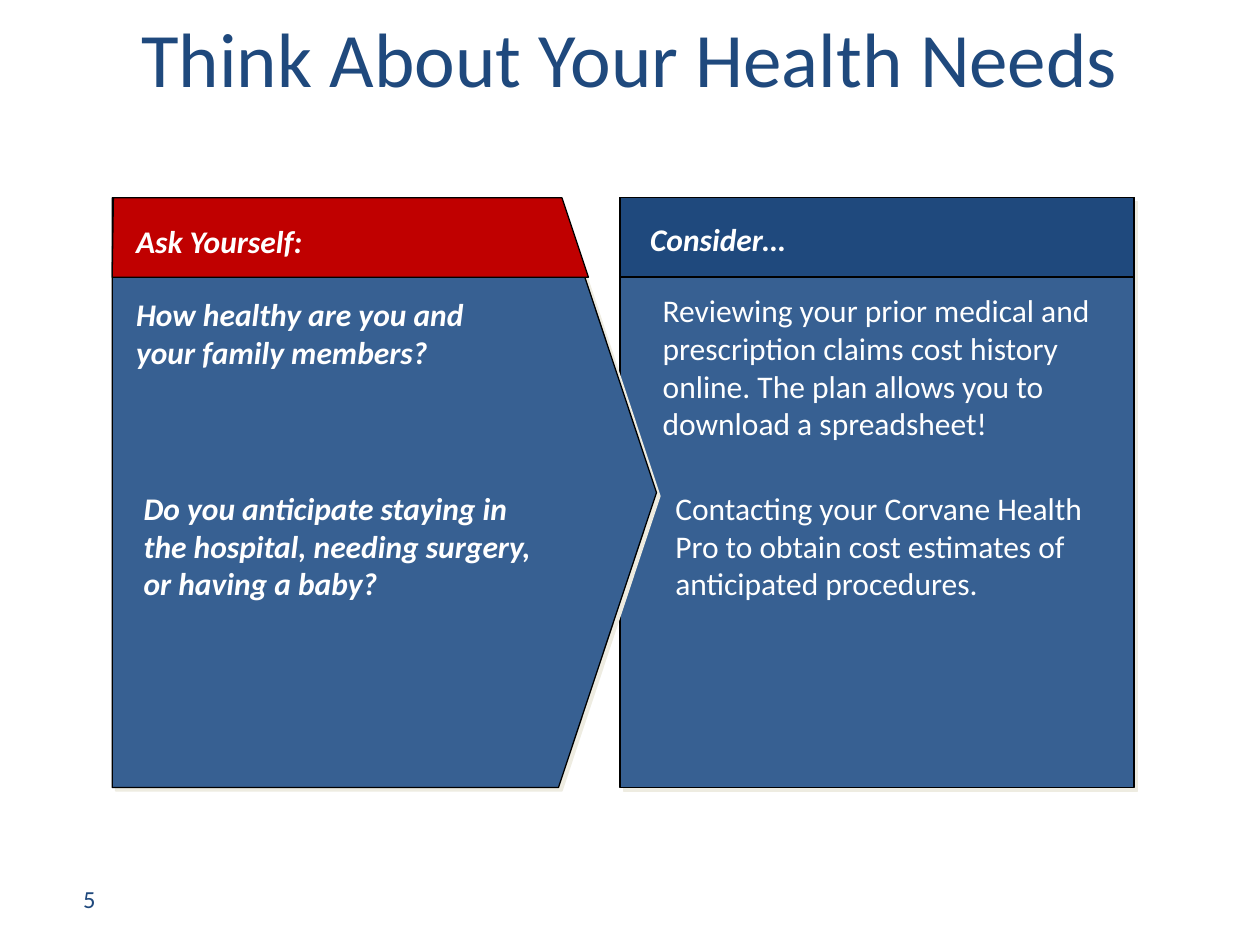
import pptx
import pptx.util
import pptx.dml.color
import pptx.enum.shapes
import pptx.enum.text
from lxml import etree
from pptx.util import Inches

TITLE = "Think About Your Health Needs"
PAGE_NUMBER = "5"
NAVY, BLUE, RED, WHITE = "1F497D", "376092", "C00000", "FFFFFF"
BLACK, SHADOW = "000000", "EEECE1"

TOP, HEIGHT, HEADER = 1.57, 4.68, 0.63
ASK = (0.89, 4.32)       # left, width
CONSIDER = (4.92, 4.08)

# text, (left, top, width, height), emphasised
TEXTS = [
    ("Ask Yourself:", (1.08, 1.76, 3.09, 0.3), True),
    ("Consider…", (5.16, 1.75, 3.09, 0.3), True),
    ("How healthy are you and your family members?",
     (1.08, 2.34, 3.12, 0.91), True),
    ("Reviewing your prior medical and prescription claims cost history "
     "online. The plan allows you to download a spreadsheet!",
     (5.26, 2.31, 3.66, 1.21), False),
    ("Do you anticipate staying in the hospital, needing surgery, "
     "or having a baby?", (1.14, 3.88, 3.26, 1.21), True),
    ("Contacting your Corvane Health Pro to obtain cost estimates of "
     "anticipated procedures.", (5.36, 3.88, 3.46, 1.21), False),
]


def rgb(color):
    return pptx.dml.color.RGBColor.from_string(color)


def inches(*values):
    return [Inches(v) for v in values]


def style(sp, fill):
    sp.fill.solid()
    sp.fill.fore_color.rgb = rgb(fill)
    sp.line.color.rgb = rgb(BLACK)
    sp.line.width = pptx.util.Pt(0.75)
    sp.shadow.inherit = False


def add_panel(s, shape, column, height, fill):
    left, width = column
    sp = s.shapes.add_shape(shape, *inches(left, TOP, width, height))
    style(sp, fill)
    return sp


def cast_shadow(sp):
    ns = "{http://schemas.openxmlformats.org/drawingml/2006/main}"
    effects = sp._element.spPr.find(ns + "effectLst")
    shadow = etree.SubElement(effects, ns + "outerShdw", dist="35560",
                              dir="2700000", algn="ctr", rotWithShape="0")
    etree.SubElement(shadow, ns + "srgbClr", val=SHADOW)


def write(sp, text, size, color, emphasised=False, centred=False):
    tf = sp.text_frame
    tf.word_wrap = True
    p = tf.paragraphs[0]
    if centred:
        p.alignment = pptx.enum.text.PP_ALIGN.CENTER
        tf.vertical_anchor = pptx.enum.text.MSO_ANCHOR.MIDDLE
    r = p.add_run()
    r.text = text
    r.font.name = "Calibri"
    r.font.size = pptx.util.Pt(size)
    r.font.color.rgb = rgb(color)
    r.font.bold = r.font.italic = emphasised


def main():
    prs = pptx.Presentation()
    prs.slide_width, prs.slide_height = inches(10, 7.5)
    s = prs.slides.add_slide(prs.slide_layouts[5])
    shapes = pptx.enum.shapes.MSO_SHAPE

    title = s.shapes.title
    title.left, title.top, title.width, title.height = inches(0, 0, 10, 0.9)
    write(title, TITLE, 44, NAVY, centred=True)

    cast_shadow(add_panel(s, shapes.RECTANGLE, CONSIDER, HEIGHT, BLUE))
    arrow = add_panel(s, shapes.PENTAGON, ASK, HEIGHT, BLUE)
    arrow.adjustments[0] = 0.18
    cast_shadow(arrow)

    bottom = TOP + HEADER
    builder = s.shapes.build_freeform(*inches(0.9, TOP), scale=1.0)
    builder.add_line_segments(
        [inches(*pt) for pt in ((0.89, bottom), (4.67, bottom), (4.46, TOP))])
    style(builder.convert_to_shape(), RED)
    add_panel(s, shapes.RECTANGLE, CONSIDER, HEADER, NAVY)

    for text, box, emphasised in TEXTS:
        sp = s.shapes.add_textbox(*inches(*box))
        tf = sp.text_frame
        tf.margin_left = tf.margin_right = tf.margin_top = tf.margin_bottom = 0
        write(sp, text, 18, WHITE, emphasised)

    number = s.shapes.add_textbox(*inches(0.25, 6.93, 0.92, 0.4))
    write(number, PAGE_NUMBER, 14, NAVY, centred=True)

    prs.save("out.pptx")


if __name__ == "__main__":
    main()
